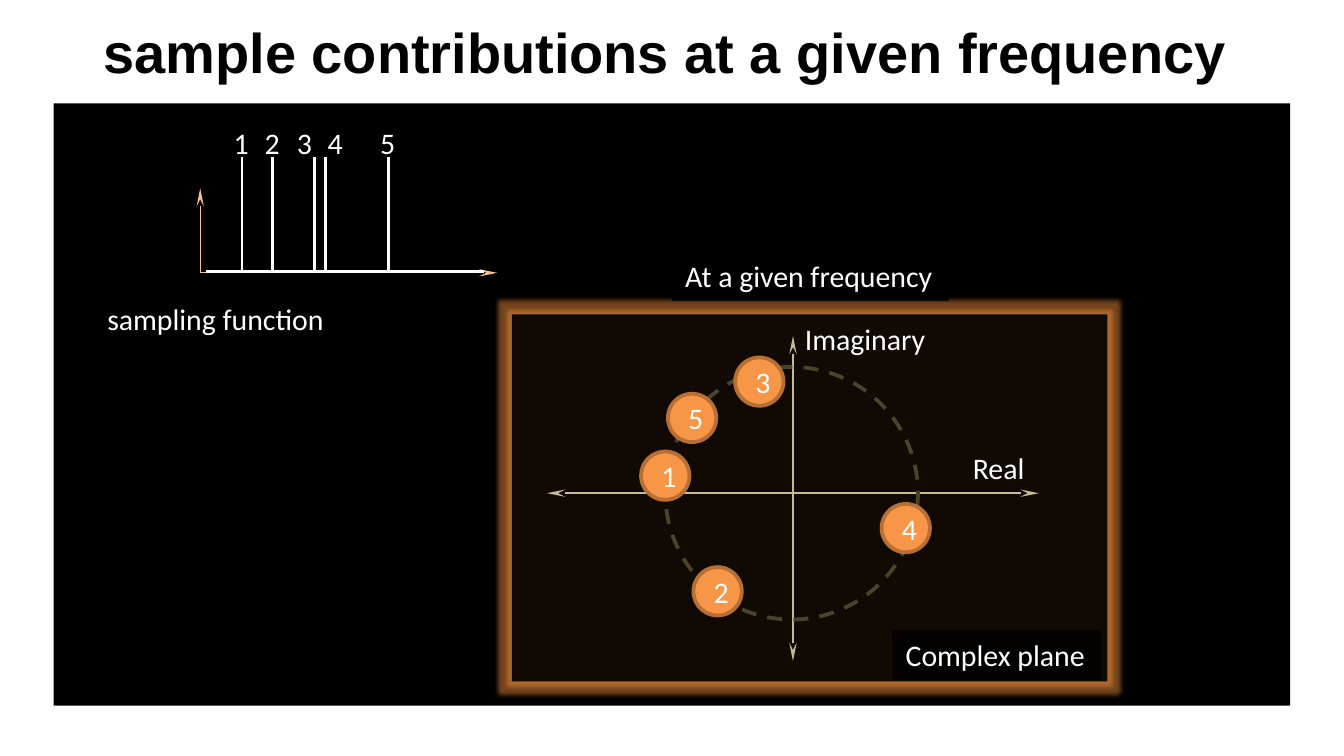
from dataclasses import dataclass

from lxml import etree
from pptx import Presentation
from pptx.dml.color import RGBColor
from pptx.enum.dml import MSO_LINE
from pptx.enum.shapes import MSO_CONNECTOR, MSO_SHAPE
from pptx.enum.text import MSO_ANCHOR, PP_ALIGN
from pptx.oxml.ns import qn
from pptx.util import Inches, Pt

LINE, DASH = MSO_CONNECTOR.STRAIGHT, MSO_LINE.DASH
RECT, OVAL = MSO_SHAPE.RECTANGLE, MSO_SHAPE.OVAL
MID, TOP = MSO_ANCHOR.MIDDLE, MSO_ANCHOR.TOP
LEFT, CENTER = PP_ALIGN.LEFT, PP_ALIGN.CENTER


@dataclass(frozen=True)
class Theme:
    """Colours, fonts and type sizes of the slide."""
    black: str = "000000"
    white: str = "FFFFFF"
    peach: str = "FAC090"
    tan: str = "C4BD97"
    olive: str = "4A452A"
    orange: str = "F79646"
    rust: str = "B76F34"
    glow: str = "FF9640"
    head: str = "Arial"
    body: str = "Calibri"
    big: int = 30
    small: int = 16


T = Theme()


def write(shape, text, size=T.small, font=T.body, color=T.white, bold=False,
          align=LEFT, anchor=TOP, wrap=True):
    """Put formatted text into a shape."""
    frame = shape.text_frame
    frame.word_wrap = wrap
    frame.vertical_anchor = anchor
    para = frame.paragraphs[0]
    para.alignment = align
    run = para.add_run()
    run.text = text
    run.font.size, run.font.name, run.font.bold = Pt(size), font, bold
    run.font.color.rgb = RGBColor.from_string(color)
    return frame


def fade(node, alpha):
    """Set the opacity, in percent, of a colour element."""
    etree.SubElement(node, qn("a:alpha")).set("val", str(alpha * 1000))


def draw(slide, kind, x, y, w, h, fill=None, alpha=None, line=None, width=2):
    """Add a plain shape with optional fill, opacity and outline."""
    shape = slide.shapes.add_shape(kind, Inches(x), Inches(y), Inches(w), Inches(h))
    shape.shadow.inherit = False
    if fill:
        shape.fill.solid()
        shape.fill.fore_color.rgb = RGBColor.from_string(fill)
        if alpha:
            fade(shape._element.spPr.find(".//" + qn("a:srgbClr")), alpha)
    else:
        shape.fill.background()
    if line:
        shape.line.color.rgb = RGBColor.from_string(line)
        shape.line.width = Pt(width)
    else:
        shape.line.fill.background()
    return shape


def stroke(slide, start, end, color, width, arrow=False):
    """Add a straight line, with a slim stealth head at its end if asked."""
    line = slide.shapes.add_connector(LINE, *map(Inches, (*start, *end)))
    line.line.color.rgb = RGBColor.from_string(color)
    line.line.width = Pt(width)
    props = line._element.spPr
    if arrow:
        head = etree.SubElement(props.find(qn("a:ln")), qn("a:tailEnd"))
        for key, val in (("type", "stealth"), ("w", "sm"), ("len", "lg")):
            head.set(key, val)
    etree.SubElement(props, qn("a:effectLst"))


def label(slide, text, x, y, w):
    """Add a one-line label without a fill."""
    box = slide.shapes.add_textbox(Inches(x), Inches(y), Inches(w), Inches(0.37))
    write(box, text, wrap=False)


def plate(slide, text, x, y, w):
    """Add a one-line label on a translucent black plate."""
    write(draw(slide, RECT, x, y, w, 0.37, T.black, 77), text, wrap=False)


def title(slide, text, x, y, w, h):
    """Add the slide title."""
    box = slide.shapes.add_textbox(Inches(x), Inches(y), Inches(w), Inches(h))
    frame = write(box, text, size=T.big, font=T.head, color=T.black, bold=True,
                  align=CENTER, anchor=MID)
    frame.margin_left = frame.margin_right = Inches(0.09)
    frame.margin_top = frame.margin_bottom = Inches(0.04)


def samples(slide, x, y, w, h):
    """Draw the sampling function with its numbered stems."""
    base = y + 1.15
    zero = (x + 0.79, base)
    stroke(slide, zero, (x + 0.79, y + 0.52), T.peach, 0.75, arrow=True)
    stroke(slide, zero, (x + w, base), T.peach, 0.75, arrow=True)
    stroke(slide, (x + 0.83, base - 0.01), (x + w - 0.1, base - 0.01), T.white, 1.5)
    stems = (1.1, 1.33, 1.64, 1.72, 2.19)
    marks = (0.94, 1.17, 1.41, 1.64, 2.03)
    for num, (stem, mark) in enumerate(zip(stems, marks), 1):
        stroke(slide, (x + stem, y + 0.29), (x + stem, base), T.white, 1.5)
        label(slide, str(num), x + mark, y, 0.32)
    plate(slide, "sampling function", x, y + h - 0.37, 1.83)


def plane(slide, x, y, w, h):
    """Draw the complex plane with its samples around the circle."""
    panel = draw(slide, RECT, x, y, w, h, T.black, 90)
    glow = etree.SubElement(panel._element.spPr.find(qn("a:effectLst")), qn("a:glow"))
    glow.set("rad", str(Pt(5)))
    tint = etree.SubElement(glow, qn("a:srgbClr"))
    tint.set("val", T.glow)
    fade(tint, 45)

    cx, cy = x + 2.09, y + 1.33
    for dx, dy in ((1.83, 0), (-1.83, 0), (0, -1.17), (0, 1.25)):
        stroke(slide, (cx, cy), (cx + dx, cy + dy), T.tan, 1, arrow=True)
    rad = 0.94
    ring = draw(slide, OVAL, cx - rad - 0.01, cy - rad, 2 * rad, 2 * rad, line=T.olive)
    ring.line.dash_style = DASH

    label(slide, "Real", cx + 1.24, cy - 0.37, 0.59)
    label(slide, "Imaginary", cx - 0.01, y, 1.11)
    plate(slide, "Complex plane", x + w - 1.6, y + h - 0.38, 1.55)
    plate(slide, "At a given frequency", x + 1.19, y - 0.47, 2.06)

    size = 0.36
    spots = ((-0.95, -0.13), (-0.56, 0.73), (-0.25, -0.83), (0.84, 0.26), (-0.75, -0.56))
    for num, (dx, dy) in enumerate(spots, 1):
        dot = draw(slide, OVAL, cx + dx - size / 2, cy + dy - size / 2, size, size,
                   T.orange, line=T.rust)
        write(dot, str(num), align=CENTER, anchor=MID)


def main():
    """Build and save the slide."""
    deck = Presentation()
    deck.slide_width = Inches(10)
    deck.slide_height = deck.slide_width * 9 // 16
    slide = deck.slides.add_slide(deck.slide_layouts[6])
    draw(slide, RECT, 0.4, 0.77, 9.2, 4.48, T.black)
    title(slide, "sample contributions at a given frequency", 0.62, 0.04, 8.66, 0.68)
    samples(slide, 0.7, 0.88, 3, 1.68)
    plane(slide, 3.81, 2.34, 4.43, 2.73)
    deck.save("out.pptx")


if __name__ == "__main__":
    main()
